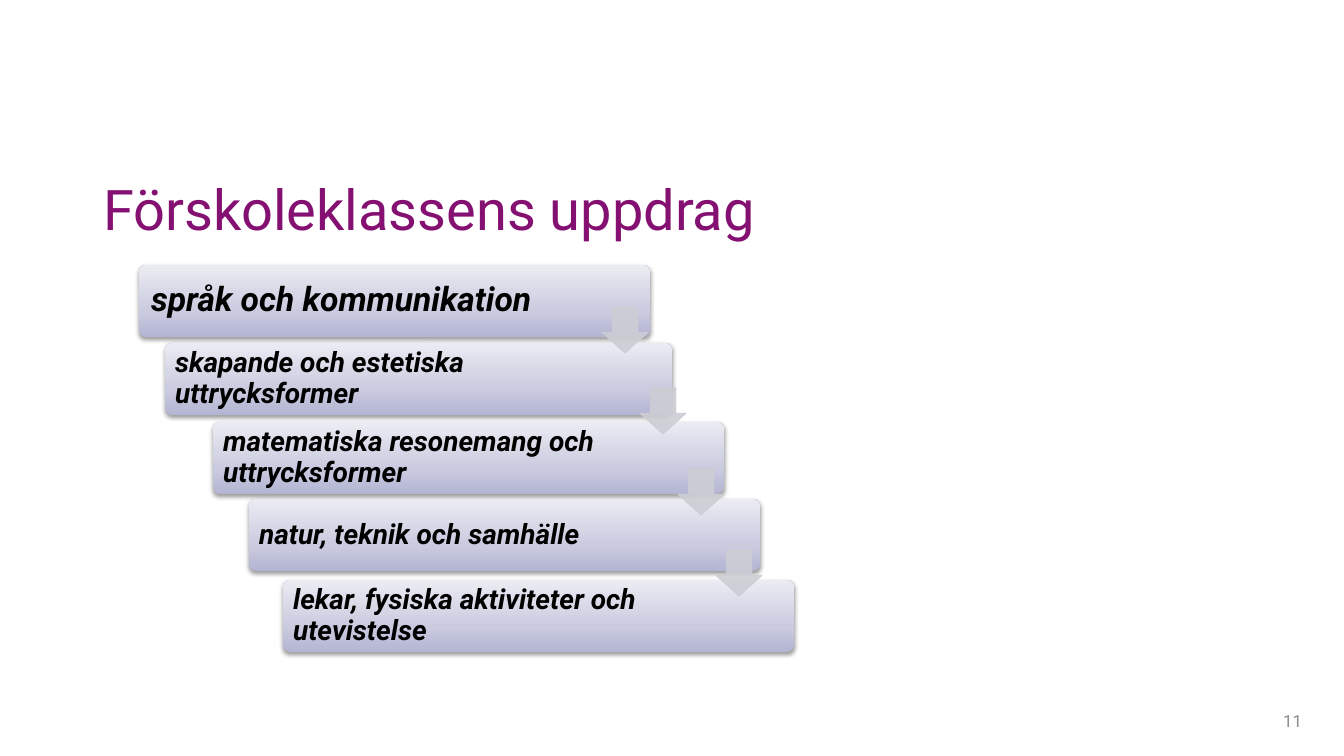
from copy import deepcopy

from pptx import Presentation
from pptx.dml.color import RGBColor
from pptx.enum.shapes import MSO_SHAPE as Shape
from pptx.enum.text import MSO_ANCHOR as Anchor, MSO_AUTO_SIZE as AutoSize, PP_ALIGN as Align
from pptx.oxml import parse_xml
from pptx.oxml.ns import nsdecls, qn
from pptx.util import Emu, Pt

PLUM = RGBColor(0x84, 0x10, 0x72)
GREY = RGBColor(0x8C, 0x8C, 0x8C)
BLACK = RGBColor(0, 0, 0)
ARROW_GREY = RGBColor(0xCD, 0xCD, 0xD5)
CARD_STOPS = [
    (0, RGBColor(0xB3, 0xB5, 0xD3)),
    (0.35, RGBColor(0xCA, 0xCB, 0xDF)),
    (1, RGBColor(0xEB, 0xEB, 0xF3)),
]

TITLE = "Förskoleklassens uppdrag"
PAGE_NUMBER = "11"
# text, left, top, width, font size, inset
CARDS = [
    ("språk och kommunikation", 139, 265, 511, 24, 10),
    ("skapande och estetiska uttrycksformer", 165, 343, 507, 20, 8),
    ("matematiska resonemang och uttrycksformer", 213, 422, 511, 20, 8),
    ("natur, teknik och samhälle", 249, 499, 511, 20, 8),
    ("lekar, fysiska aktiviteter och utevistelse", 283, 580, 511, 20, 8),
]
CARD_HEIGHT = 72
CARD_RIGHT_INSET = 93
ARROW_LEFT, ARROW_TOP, ARROW_SIZE = 602, 307, 46
ARROW_STEP_X, ARROW_STEP_Y = 38, 81

SLIDE_WIDTH, SLIDE_HEIGHT = 1344, 756
SCALE = 12192000 / SLIDE_WIDTH


def px(*lengths):
    return [Emu(round(length * SCALE)) for length in lengths]


def write(shape, text, size, color, anchor=Anchor.MIDDLE, align=Align.LEFT,
          bold=False, italic=False, line_spacing=None, insets=None):
    """Fill a shape with one paragraph; insets are left, top, right, bottom in px."""
    frame = shape.text_frame
    frame.word_wrap = True
    frame.auto_size = AutoSize.NONE
    frame.vertical_anchor = anchor
    if insets:
        (frame.margin_left, frame.margin_top,
         frame.margin_right, frame.margin_bottom) = px(*insets)
    para = frame.paragraphs[0]
    para.alignment = align
    para.line_spacing = line_spacing
    span = para.add_run()
    span.text = text
    font = span.font
    font.name, font.size, font.bold, font.italic = "Roboto", Pt(size), bold, italic
    font.color.rgb = color


def add_card(page, text, left, top, width, size, inset):
    card = page.shapes.add_shape(Shape.ROUNDED_RECTANGLE, *px(left, top, width, CARD_HEIGHT))
    card.adjustments[0] = 0.1
    card.line.fill.background()
    card.fill.gradient()
    card.fill.gradient_angle = 90
    properties = card._element.spPr
    first_stop = properties.find(".//" + qn("a:gs"))
    first_stop.addnext(deepcopy(first_stop))
    for stop, (position, color) in zip(card.fill.gradient_stops, CARD_STOPS):
        stop.position = position
        stop.color.rgb = color
    card.shadow.inherit = False
    properties.find(qn("a:effectLst")).append(parse_xml(
        f'<a:outerShdw {nsdecls("a")} blurRad="{Pt(3.1)}" dist="{Pt(1.6)}" dir="5400000" '
        'rotWithShape="0"><a:srgbClr val="000000"><a:alpha val="38000"/></a:srgbClr>'
        '</a:outerShdw>'))
    write(card, text, size, BLACK, bold=True, italic=True, line_spacing=0.9,
          insets=(inset, inset, CARD_RIGHT_INSET, inset))


def add_arrow(page, left, top):
    arrow = page.shapes.add_shape(Shape.DOWN_ARROW, *px(left, top, ARROW_SIZE, ARROW_SIZE))
    arrow.adjustments[0], arrow.adjustments[1] = 0.45, 0.55
    arrow.adjustments[0], arrow.adjustments[1] = 0.55, 0.45
    arrow.shadow.inherit = False
    arrow.line.width = Pt(0.75)
    for fill in (arrow.fill, arrow.line.fill):
        fill.solid()
        fill.fore_color.rgb = ARROW_GREY
    for color in arrow._element.spPr.iter(qn("a:srgbClr")):
        color.append(parse_xml(f'<a:alpha {nsdecls("a")} val="90000"/>'))


def main():
    deck = Presentation()
    deck.slide_width, deck.slide_height = px(SLIDE_WIDTH, SLIDE_HEIGHT)
    page = deck.slides.add_slide(deck.slide_layouts[5])

    title = page.shapes.title
    title.left, title.top, title.width, title.height = px(93, 110, 1033, 138)
    write(title, TITLE, 40, PLUM, anchor=Anchor.BOTTOM, line_spacing=0.9)

    number = page.shapes.add_textbox(*px(1010, 701, 302, 40))
    write(number, PAGE_NUMBER, 12, GREY, align=Align.RIGHT)

    for card in CARDS:
        add_card(page, *card)
    for step in range(len(CARDS) - 1):
        add_arrow(page, ARROW_LEFT + step * ARROW_STEP_X, ARROW_TOP + step * ARROW_STEP_Y)

    deck.save("out.pptx")


if __name__ == "__main__":
    main()
